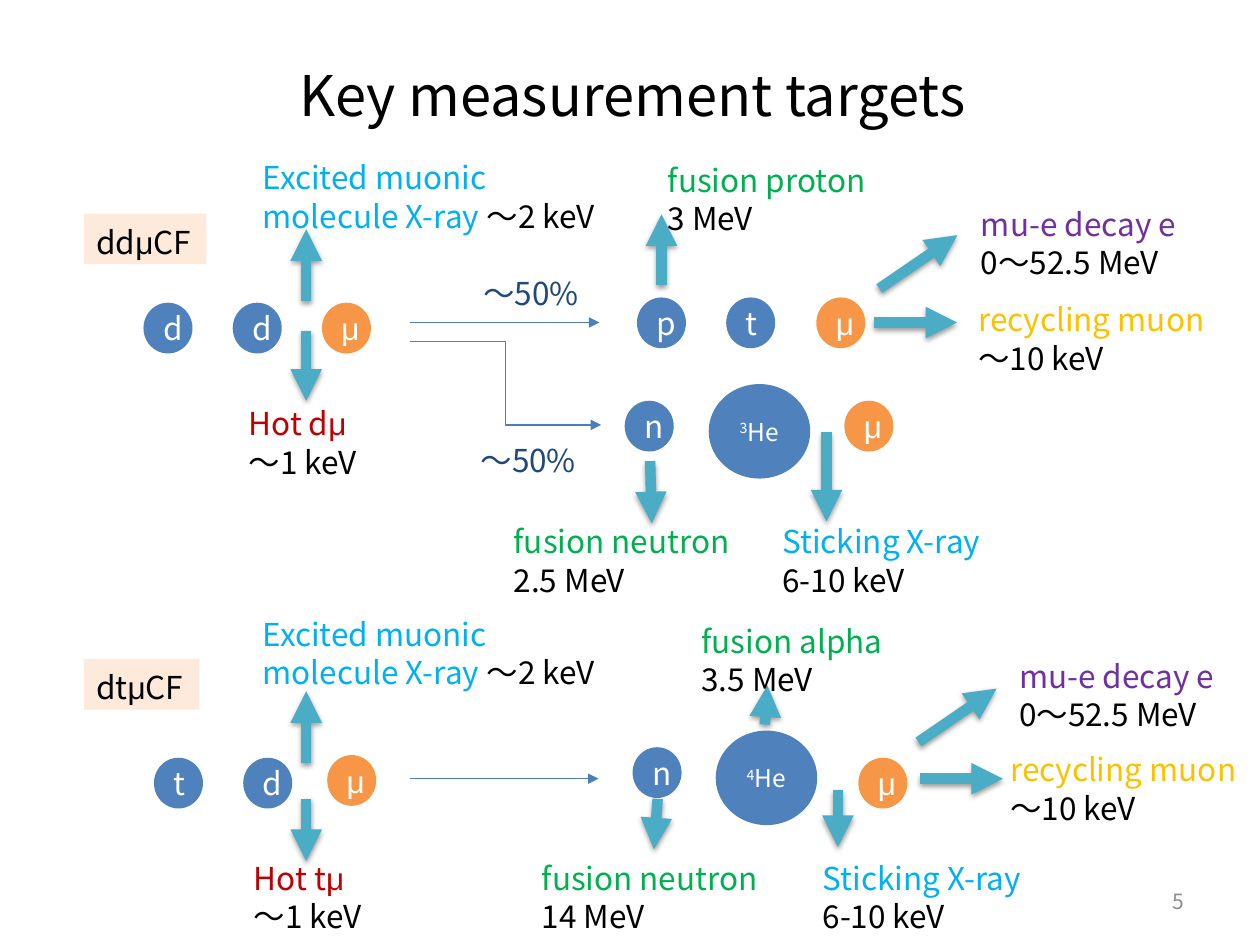
from dataclasses import dataclass
from lxml.etree import SubElement as Sub
from pptx import Presentation
from pptx.dml.color import RGBColor as Rgb
from pptx.enum.shapes import MSO_CONNECTOR as Conn, MSO_SHAPE as Shape
from pptx.enum.text import MSO_ANCHOR as Anchor, PP_ALIGN as Align
from pptx.oxml.ns import qn
from pptx.util import Pt


@dataclass(frozen=True)
class Theme:
    """Colours, fonts and type sizes of the slide."""
    black: str = "000000"
    white: str = "FFFFFF"
    blue: str = "4F81BD"
    orange: str = "F79646"
    peach: str = "FDEADA"
    navy: str = "1F497D"
    line: str = "4B7EBC"
    teal: str = "4BACC6"
    sky: str = "00B0F0"
    green: str = "00B050"
    red: str = "C00000"
    gold: str = "FFC000"
    purple: str = "7030A0"
    grey: str = "8C8C8C"
    face: str = "Noto Sans CJK JP"
    greek: str = "Arial"
    head: int = 32
    body: int = 18
    small: int = 14
    page: int = 12
    lead: int = 22


T = Theme()


def put(item, **vals):
    """Set each named value on the item."""
    for key, val in vals.items():
        setattr(item, key, val)


def write(para, text, tint, size=T.body, raised=False):
    """Add text to a paragraph, with Greek letters in their own font."""
    for part in text.replace("μ", "|μ|").split("|"):
        if part:
            run = para.add_run()
            run.text = part
            name = T.greek if part == "μ" else T.face
            put(run.font, name=name, size=Pt(size))
            run.font.color.rgb = Rgb.from_string(tint)
            props = run.font._element
            Sub(props, qn("a:ea")).set("typeface", T.face)
            if raised:
                props.set("baseline", "30000")


def label(slide, x, y, wide, lines, fill=None):
    """Place lines of (text, tint) runs in an unwrapped box."""
    tall = 7 + T.lead * len(lines)
    box = slide.shapes.add_textbox(Pt(x), Pt(y), Pt(wide), Pt(tall))
    frame = box.text_frame
    put(frame, word_wrap=False, margin_top=Pt(5), margin_bottom=Pt(2))
    if fill:
        box.fill.solid()
        box.fill.fore_color.rgb = Rgb.from_string(fill)
    for num, runs in enumerate(lines):
        para = frame.add_paragraph() if num else frame.paragraphs[0]
        para.line_spacing = Pt(T.lead)
        for text, tint in runs:
            write(para, text, tint)


def note(slide, x, y, wide, name, tint, value):
    """Place a coloured name above its energy."""
    label(slide, x, y, wide, [[(name, tint)], [(value, T.black)]])


def ball(slide, x, y, name):
    """Draw a particle; a leading digit marks a large nucleus."""
    big = name[0].isdigit()
    wide, tall = (58, 54) if big else (28, 29)
    dot = slide.shapes.add_shape(Shape.OVAL, Pt(x), Pt(y), Pt(wide), Pt(tall))
    dot.shadow.inherit = False
    dot.fill.solid()
    tint = T.orange if name == "μ" else T.blue
    dot.fill.fore_color.rgb = Rgb.from_string(tint)
    dot.line.fill.background()
    put(dot.text_frame, vertical_anchor=Anchor.MIDDLE, word_wrap=True)
    para = dot.text_frame.paragraphs[0]
    para.alignment = Align.CENTER
    if big:
        write(para, name[0], T.white, T.small, True)
        write(para, name[1:], T.white, T.small)
    else:
        write(para, name, T.white)


def arrow(slide, ends, kind=Conn.STRAIGHT, tint=T.line, width=0.75):
    """Draw an arrow and return its effect list."""
    link = slide.shapes.add_connector(kind, *[Pt(v) for v in ends])
    link.line.width = Pt(width)
    link.line.color.rgb = Rgb.from_string(tint)
    props = link._element.spPr
    Sub(props.find(qn("a:ln")), qn("a:tailEnd")).set("type", "triangle")
    return Sub(props, qn("a:effectLst"))


def beam(slide, ends):
    """Draw a thick arrow with a soft shadow."""
    glow = Sub(arrow(slide, ends, tint=T.teal, width=6), qn("a:outerShdw"))
    vals = {"blurRad": Pt(3.1), "dist": Pt(1.6), "dir": 5400000, "rotWithShape": 0}
    for key, val in vals.items():
        glow.set(key, str(int(val)))
    tint = Sub(glow, qn("a:srgbClr"))
    tint.set("val", T.black)
    Sub(tint, qn("a:alpha")).set("val", "38000")


def heading(slide, x, y, wide, tall, text, size, tint, align):
    """Place one line of text, centred in height."""
    box = slide.shapes.add_textbox(Pt(x), Pt(y), Pt(wide), Pt(tall))
    put(box.text_frame, word_wrap=True, vertical_anchor=Anchor.MIDDLE)
    para = box.text_frame.paragraphs[0]
    para.alignment = align
    write(para, text, tint, size)


def start(slide, x, y, tag, balls, rise, fall, hot):
    """Draw the molecule before fusion, with its X-ray and hot atom."""
    text, down, wide = tag
    label(slide, x, y + down, wide, [[(text, T.black)]], T.peach)
    for dx, dy, name in balls:
        ball(slide, x + dx, y + dy, name)
    for top, end in (rise, fall):
        beam(slide, (x + 127, y + top, x + 127, y + end))
    label(slide, x + 95, y, 222, [
        [("Excited muonic", T.sky)],
        [("molecule X-ray ", T.sky), ("～2 keV", T.black)]])
    name, dx, dy = hot
    note(slide, x + dx, y + dy, 83, name, T.red, "～1 keV")


def branch(slide, x, y, balls, beams, notes):
    """Draw the products of one fusion branch."""
    for dx, dy, name in balls:
        ball(slide, x + dx, y + dy, name)
    for a, b, c, d in beams:
        beam(slide, (x + a, y + b, x + c, y + d))
    for dx, dy, wide, name, tint, value in notes:
        note(slide, x + dx, y + dy, wide, name, tint, value)


def decay(slide, x, y, slant, first, second):
    """Draw the two fates of a freed muon."""
    beam(slide, (x, y, x + 47.5, y))
    dx, dy = slant
    beam(slide, (x + dx, y + dy, x + dx + 44.6, y + dy - 30.5))
    fates = ((first, 136, "mu-e decay e", T.purple, "0～52.5 MeV"),
             (second, 150, "recycling muon", T.gold, "～10 keV"))
    for (dx, dy), wide, *words in fates:
        note(slide, x + dx, y + dy, wide, *words)


def flow(slide, x, y):
    """Draw the split of the first reaction into two branches."""
    arrow(slide, (x, y, x + 108, y))
    arrow(slide, (x, y + 11, x + 109, y + 58.5), Conn.ELBOW)
    for dx, dy in ((34.5, -33), (33, 62.5)):
        label(slide, x + dx, y + dy, 74, [[("～50%", T.navy)]])


def main():
    """Build and save the slide."""
    deck = Presentation()
    put(deck, slide_width=Pt(720), slide_height=Pt(540))
    slide = deck.slides.add_slide(deck.slide_layouts[6])
    heading(slide, 3.6, 8.6, 716, 90, "Key measurement targets",
            T.head, T.black, Align.CENTER)

    start(slide, 48, 85, ("ddμCF", 37, 70),
          [(34, 88, "d"), (85, 88, "d"), (136, 88, "μ")],
          (87, 46), (104, 144), ("Hot dμ", 87, 140.5))
    flow(slide, 234.5, 184.3)
    branch(slide, 364, 170, [(0, 0, "p"), (51, 0, "t"), (102.5, 0, "μ")],
           [(14, -7, 14, -47.5)],
           [(10.5, -83.5, 132, "fusion proton", T.green, "3 MeV")])
    branch(slide, 357, 229, [(0, 0, "n"), (48, -9.5, "3He"), (125.5, 0, "μ")],
           [(14.5, 34.5, 15.5, 70), (115.3, 18, 115.3, 69)],
           [(-70.5, 64, 143, "fusion neutron", T.green, "2.5 MeV"),
            (83, 64, 138, "Sticking X-ray", T.sky, "6-10 keV")])
    decay(slide, 499.5, 184.3, (3, -19.4), (54, -72.7), (52.5, -18))

    start(slide, 48, 346, ("dtμCF", 30.5, 66),
          [(40, 87, "t"), (91, 87, "d"), (139, 85.5, "μ")],
          (90, 49), (110.5, 146), ("Hot tμ", 90, 139.3))
    arrow(slide, (234.5, 445, 342, 445))
    branch(slide, 361.5, 427, [(0, 0, "n"), (47.5, -9.5, "4He"), (129, 6, "μ")],
           [(14.3, 29.5, 12.2, 58.3), (117.3, 24.5, 117.3, 57),
            (75.5, -13, 77, -35.3)],
           [(-59, 58.3, 143, "fusion neutron", T.green, "14 MeV"),
            (101.5, 58.3, 138, "Sticking X-ray", T.sky, "6-10 keV"),
            (32.3, -77, 122, "fusion alpha", T.green, "3.5 MeV")])
    decay(slide, 525.6, 445, (-0.7, -21), (49.7, -75), (44.6, -21.6))
    heading(slide, 516, 500.5, 168, 29, "5", T.page, T.grey, Align.RIGHT)
    deck.save("out.pptx")


if __name__ == "__main__":
    main()
